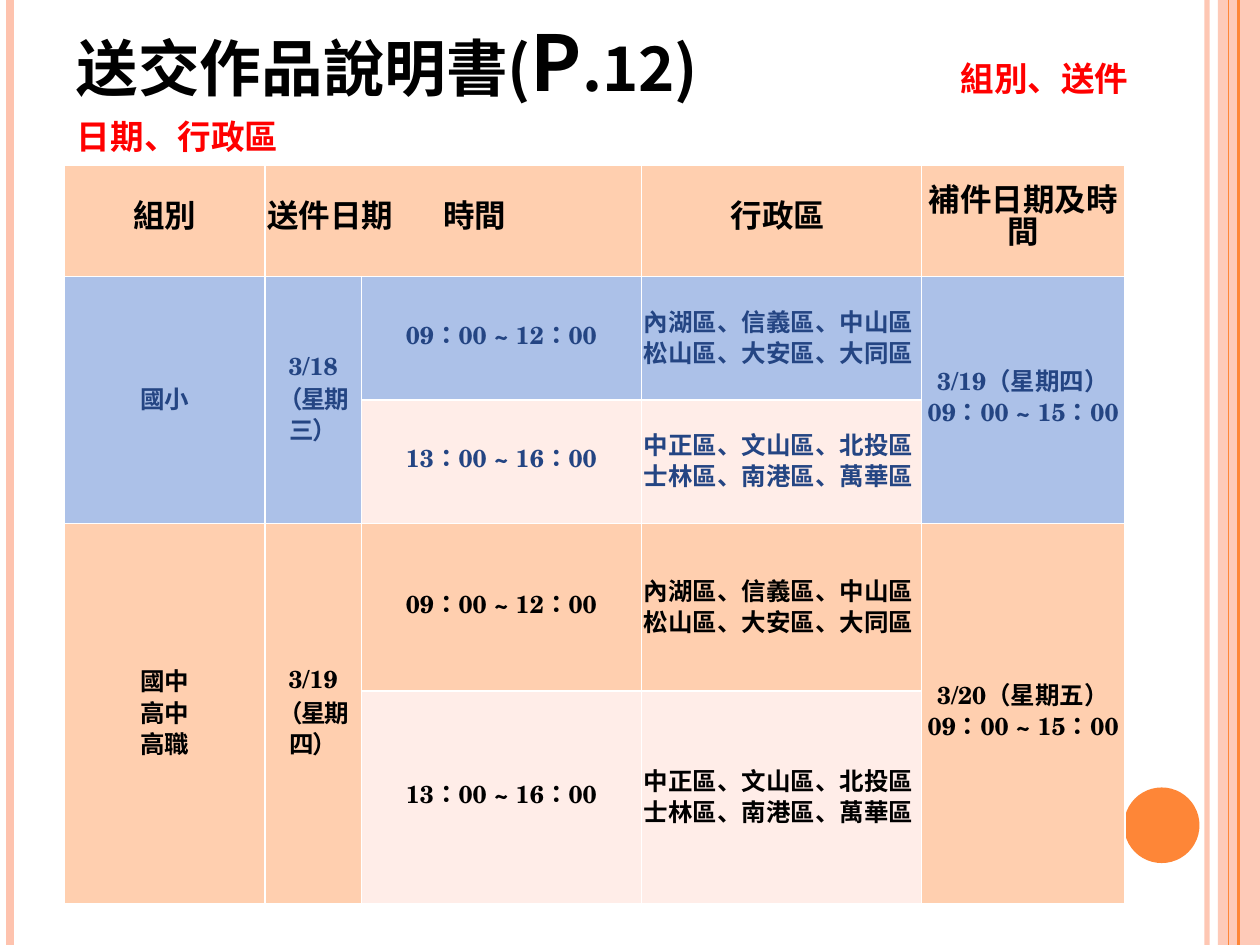
from lxml import etree
from pptx import Presentation
from pptx.dml.color import RGBColor
from pptx.enum.shapes import MSO_CONNECTOR, MSO_SHAPE
from pptx.enum.text import MSO_ANCHOR, MSO_AUTO_SIZE, PP_ALIGN
from pptx.oxml.ns import qn
from pptx.util import Pt

LEFT, CENTER, JUSTIFY = PP_ALIGN.LEFT, PP_ALIGN.CENTER, PP_ALIGN.JUSTIFY
STRAIGHT = MSO_CONNECTOR.STRAIGHT

BLACK = RGBColor(0x00, 0x00, 0x00)
WHITE = RGBColor(0xFF, 0xFF, 0xFF)
RED = RGBColor(0xFF, 0x00, 0x00)
NAVY = RGBColor(0x24, 0x45, 0x83)
ORANGE = RGBColor(0xFE, 0x86, 0x37)
SALMON = RGBColor(0xFE, 0xC3, 0xAE)
PEACH = RGBColor(0xFF, 0xCF, 0xAF)
BLUE = RGBColor(0xAC, 0xC1, 0xE8)
PALE = RGBColor(0xFF, 0xED, 0xE8)
SANS, SERIF = "Noto Sans CJK JP", "TeX Gyre Schola"

# Content
TITLE = [("送交作品說明書(P.12)", 44, BLACK), ("\t", 36, BLACK),
         ("組別、送件日期、行政區", 24, RED)]
HEADERS = [(0, "組別", CENTER), (1, "送件日期\t時間", LEFT),
           (3, "行政區", JUSTIFY), (4, "補件日期及時間", CENTER)]
MORNING = ("09：00 ~ 12：00", ["內湖區、信義區、中山區", "松山區、大安區、大同區"])
AFTERNOON = ("13：00 ~ 16：00", ["中正區、文山區、北投區", "士林區、南港區、萬華區"])
LATE_TIME = "09：00 ~ 15：00"
GROUPS = [  # names, date, weekday, late date, fill, text colour
    (["國小"], "3/18", "（星期三）", "3/19（星期四）", BLUE, NAVY),
    (["國中", "高中", "高職"], "3/19", "（星期四）", "3/20（星期五）", PEACH, BLACK),
]

# Layout in points
PAGE_W, PAGE_H = 720, 540
COLUMNS = [114.5, 55, 160, 160, 116.5]
ROWS = [63.5, 70.5, 70.5, 96, 121.5]
RULES = [(689.75, 3, SALMON, 93), (5.75, 4.5, SALMON, 100),
         (707.75, 1.5, ORANGE, 100), (702, 0.75, ORANGE, 100)]


def add_xml(parent, tag, **attributes):
    return etree.SubElement(parent, qn(tag), **attributes)


def set_alpha(element, percent):
    color = next(element.iter(qn("a:srgbClr")))
    add_xml(color, "a:alpha", val=str(percent * 1000))


def add_span(para, text, size, color, latin):
    span = para.add_run()
    span.text = text
    span.font.size, span.font.bold, span.font.name = Pt(size), True, latin
    span.font.color.rgb = color
    props = span.font._element
    add_xml(props, "a:ea", typeface=SANS)
    return props


def add_tab_stop(para, position):
    stops = add_xml(para._p.get_or_add_pPr(), "a:tabLst")
    add_xml(stops, "a:tab", pos=str(Pt(position)), algn="l")


def draw_decoration(page):
    for x, width, color, opacity in RULES:
        rule = page.shapes.add_connector(STRAIGHT, Pt(x), 0, Pt(x), Pt(PAGE_H))
        rule.line.width = Pt(width)
        rule.line.color.rgb = color
        add_xml(rule._element.spPr, "a:effectLst")
        if opacity < 100:
            set_alpha(rule._element.spPr, opacity)
        if color == SALMON and opacity == 100:
            add_shape(page, MSO_SHAPE.RECTANGLE, 696, 0, 24, PAGE_H, SALMON, 87)
    add_shape(page, MSO_SHAPE.OVAL, 642.25, 450, 43.2, 43.2, ORANGE, 100)


def add_shape(page, kind, left, top, width, height, color, opacity):
    shape = page.shapes.add_shape(kind, Pt(left), Pt(top), Pt(width), Pt(height))
    shape.shadow.inherit = False
    shape.line.fill.background()
    shape.fill.solid()
    shape.fill.fore_color.rgb = color
    if opacity < 100:
        set_alpha(shape._element.spPr, opacity)


def fill_title(page):
    box = page.shapes.title
    box.left, box.top, box.width, box.height = Pt(36.75), Pt(3.6), Pt(630), Pt(90)
    frame = box.text_frame
    frame.word_wrap, frame.auto_size = True, MSO_AUTO_SIZE.NONE
    frame.vertical_anchor = MSO_ANCHOR.BOTTOM
    para = frame.paragraphs[0]
    para.alignment = LEFT
    add_tab_stop(para, 505)
    for text, size, color in TITLE:
        add_span(para, text, size, color, SANS).set("cap", "small")


def write_cell(cell, lines, size, color, align=CENTER):
    """Each line is a paragraph; a tuple is a date over a tightened weekday."""
    for index, line in enumerate(lines):
        frame = cell.text_frame
        para = frame.add_paragraph() if index else frame.paragraphs[0]
        para.alignment, para.line_spacing = align, Pt(17.9)
        if isinstance(line, tuple):
            date, weekday = line
            add_span(para, date, size, color, SERIF)
            para.add_line_break()
            add_span(para, weekday, size, color, SERIF).set("spc", "-100")
        else:
            add_span(para, line, size, color, SERIF)


def style_cell(cell, color):
    cell.vertical_anchor = MSO_ANCHOR.MIDDLE
    cell.margin_left = cell.margin_right = Pt(1.25)
    cell.margin_top = cell.margin_bottom = 0
    props = cell._tc.get_or_add_tcPr()
    for side in ("a:lnL", "a:lnR", "a:lnT", "a:lnB"):
        border = add_xml(props, side, w=str(Pt(1)))
        add_xml(add_xml(border, "a:solidFill"), "a:srgbClr", val=str(WHITE))
    cell.fill.solid()
    cell.fill.fore_color.rgb = color


def build_table(page):
    table = page.shapes.add_table(len(ROWS), len(COLUMNS), Pt(37), Pt(94.5),
                                  Pt(sum(COLUMNS)), Pt(sum(ROWS))).table
    table.first_row = table.horz_banding = False
    for column, width in zip(table.columns, COLUMNS):
        column.width = Pt(width)
    for row, height in zip(table.rows, ROWS):
        row.height = Pt(height)

    # Header row
    for index in range(len(COLUMNS)):
        style_cell(table.cell(0, index), PEACH)
    table.cell(0, 1).merge(table.cell(0, 2))
    for index, text, align in HEADERS:
        write_cell(table.cell(0, index), [text], 18, BLACK, align)
    add_tab_stop(table.cell(0, 1).text_frame.paragraphs[0], 100.5)
    district = table.cell(0, 3).text_frame.paragraphs[0]
    district._p.get_or_add_pPr().set("indent", str(Pt(50)))

    # Two rows for each school group
    for number, (names, date, weekday, late, fill, color) in enumerate(GROUPS):
        top = 1 + 2 * number
        for offset, (time, districts) in enumerate((MORNING, AFTERNOON)):
            row = top + offset
            for index in range(len(COLUMNS)):
                pale = offset and index in (2, 3)
                style_cell(table.cell(row, index), PALE if pale else fill)
            write_cell(table.cell(row, 2), [time], 14, color)
            write_cell(table.cell(row, 3), districts, 14, color, JUSTIFY)
        shared = {0: names, 1: [(date, weekday)], 4: [late, LATE_TIME]}
        for index, lines in shared.items():
            table.cell(top, index).merge(table.cell(top + 1, index))
            write_cell(table.cell(top, index), lines, 14, color)


def main():
    deck = Presentation()
    deck.slide_width, deck.slide_height = Pt(PAGE_W), Pt(PAGE_H)
    page = deck.slides.add_slide(deck.slide_layouts[5])
    draw_decoration(page)
    fill_title(page)
    build_table(page)
    deck.save("out.pptx")


if __name__ == "__main__":
    main()
